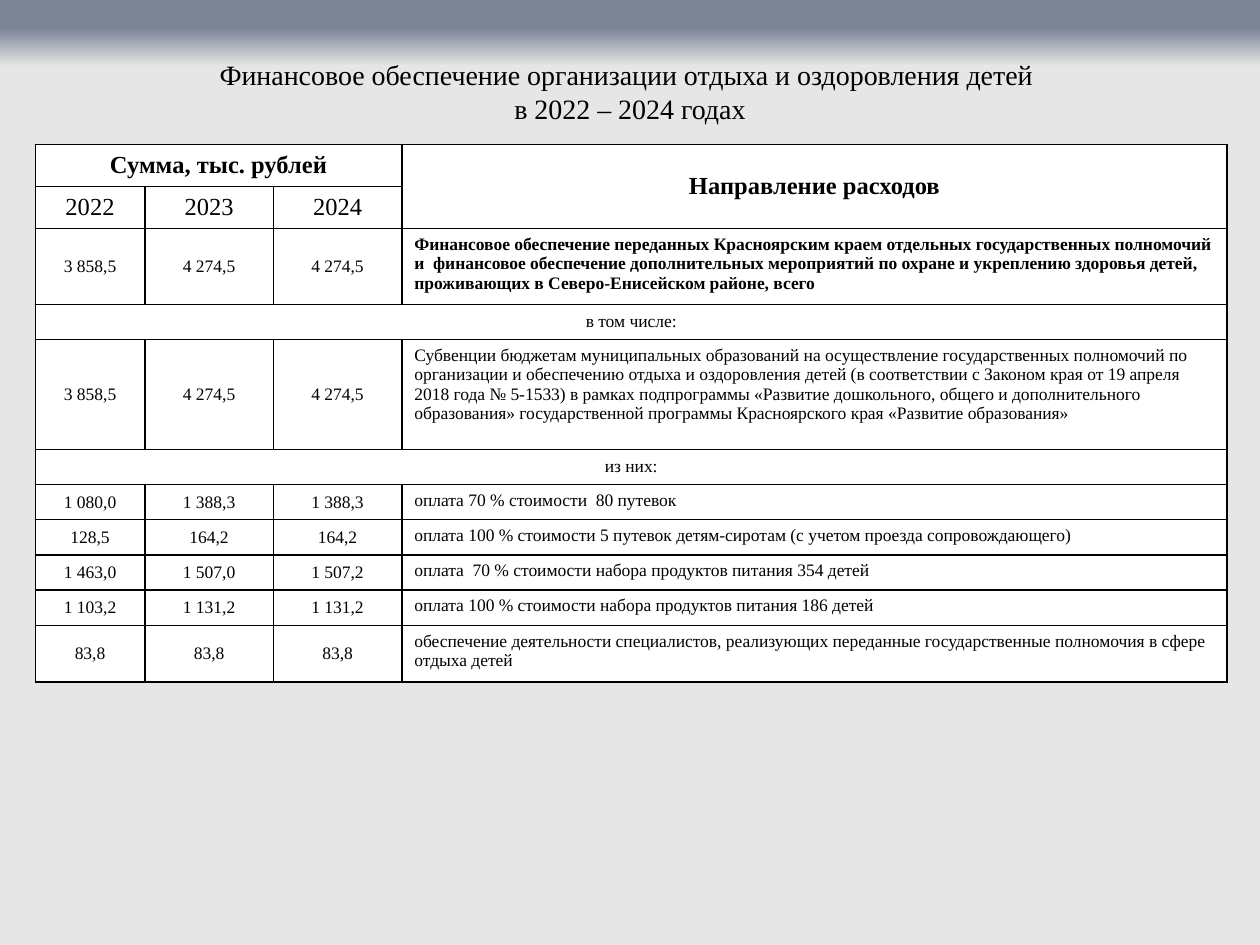
from lxml.etree import SubElement
from pptx import Presentation
from pptx.dml.color import RGBColor
from pptx.enum.text import MSO_ANCHOR, PP_ALIGN
from pptx.oxml.ns import qn
from pptx.util import Inches, Pt

BLACK = RGBColor(0, 0, 0)
WHITE = RGBColor(255, 255, 255)
SLATE = RGBColor(0x7D, 0x84, 0x96)
PALE = RGBColor(0xE6, 0xE6, 0xE6)

COLS = [8.7, 10.2, 10.2, 65.5]
ROWS = [4.2, 4.2, 7.5, 3.73, 11.6] + [3.73] * 5 + [6]
SUMS = [
    (2, "3 858,5", "4 274,5", "4 274,5",
     "Финансовое обеспечение переданных Красноярским краем отдельных "
     "государственных полномочий и  финансовое обеспечение дополнительных "
     "мероприятий по охране и укреплению здоровья детей, проживающих в "
     "Северо-Енисейском районе, всего"),
    (4, "3 858,5", "4 274,5", "4 274,5",
     "Субвенции бюджетам муниципальных образований на осуществление "
     "государственных полномочий по организации и обеспечению отдыха и "
     "оздоровления детей (в соответствии с Законом края от 19 апреля 2018 "
     "года № 5-1533) в рамках подпрограммы «Развитие дошкольного, общего и "
     "дополнительного образования» государственной программы Красноярского "
     "края «Развитие образования»"),
    (6, "1 080,0", "1 388,3", "1 388,3", "оплата 70 % стоимости  80 путевок"),
    (7, "128,5", "164,2", "164,2",
     "оплата 100 % стоимости 5 путевок детям-сиротам "
     "(с учетом проезда сопровождающего)"),
    (8, "1 463,0", "1 507,0", "1 507,2",
     "оплата  70 % стоимости набора продуктов питания 354 детей"),
    (9, "1 103,2", "1 131,2", "1 131,2",
     "оплата 100 % стоимости набора продуктов питания 186 детей"),
    (10, "83,8", "83,8", "83,8",
     "обеспечение деятельности специалистов, реализующих переданные "
     "государственные полномочия в сфере отдыха детей"),
]


class Page:
    """Hold the style and the current slide, with lengths in percent of its size."""

    font = "Times New Roman"

    def __init__(self, deck):
        self.wide, self.high = deck.slide_width / 100, deck.slide_height / 100
        self.slide = deck.slides.add_slide(deck.slide_layouts[6])

    def area(self, left, top, width, height):
        return (int(left * self.wide), int(top * self.high),
                int(width * self.wide), int(height * self.high))

    def back(self, stops):
        fill = self.slide.background.fill
        fill.gradient()
        fill.gradient_angle = 270
        group = self.slide.element.find(".//" + qn("a:gsLst"))
        for stop in list(group):
            group.remove(stop)
        for share, tone in stops:
            stop = SubElement(group, qn("a:gs"), pos=str(share * 1000))
            SubElement(stop, qn("a:srgbClr"), val=str(tone))

    def text(self, frame, lines, size, bold=False, align=PP_ALIGN.CENTER):
        para = frame.paragraphs[0]
        para.alignment = align
        for num, line in enumerate(lines):
            if num:
                para.add_line_break()
            run = para.add_run()
            run.text = line
            run.font.name, run.font.size = self.font, Pt(size)
            run.font.bold, run.font.color.rgb = bold, BLACK

    def title(self, place, lines):
        frame = self.slide.shapes.add_textbox(*self.area(*place)).text_frame
        frame.word_wrap = True
        frame.vertical_anchor = MSO_ANCHOR.MIDDLE
        self.text(frame, lines, 16)

    def table(self, left, top, cols, rows):
        place = self.area(left, top, sum(cols), sum(rows))
        grid = self.slide.shapes.add_table(len(rows), len(cols), *place).table
        for col, share in zip(grid.columns, cols):
            col.width = int(share * self.wide)
        for row, share in zip(grid.rows, rows):
            row.height = int(share * self.high)
        for cell in grid.iter_cells():
            self.frame(cell)
        return grid

    def frame(self, cell):
        props = cell._tc.get_or_add_tcPr()
        for side in "LRTB":
            line = SubElement(props, qn("a:ln" + side), w=str(int(Pt(1))))
            fill = SubElement(line, qn("a:solidFill"))
            SubElement(fill, qn("a:srgbClr"), val=str(BLACK))
        cell.fill.solid()
        cell.fill.fore_color.rgb = WHITE

    def cell(self, grid, row, col, text, size=10, bold=False, span=(1, 1)):
        cell = grid.cell(row, col)
        if span != (1, 1):
            cell.merge(grid.cell(row + span[0] - 1, col + span[1] - 1))
        cell.vertical_anchor = MSO_ANCHOR.MIDDLE
        self.text(cell.text_frame, [text], size, bold)

    def note(self, grid, row, text, bold):
        cell = grid.cell(row, 3)
        cell.vertical_anchor = MSO_ANCHOR.TOP
        self.text(cell.text_frame, [text], 10, bold, PP_ALIGN.LEFT)


def main():
    deck = Presentation()
    deck.slide_width, deck.slide_height = Inches(10), Inches(7.5)
    page = Page(deck)
    page.back([(0, SLATE), (3, SLATE), (7, PALE), (100, PALE)])
    page.title((5, 4, 90, 11.3), [
        "Финансовое обеспечение организации отдыха и оздоровления детей ",
        "в 2022 – 2024 годах"])
    grid = page.table(2.8, 15.3, COLS, ROWS)
    page.cell(grid, 0, 0, "Сумма, тыс. рублей", 14, True, (1, 3))
    page.cell(grid, 0, 3, "Направление расходов", 14, True, (2, 1))
    for col, year in enumerate(["2022", "2023", "2024"]):
        page.cell(grid, 1, col, year, 14)
    for row, text in [(3, "в том числе:"), (5, "из них:")]:
        page.cell(grid, row, 0, text, span=(1, 4))
    for row, *sums, text in SUMS:
        for col, value in enumerate(sums):
            page.cell(grid, row, col, value)
        page.note(grid, row, text, row == 2)
    deck.save("out.pptx")


if __name__ == "__main__":
    main()
